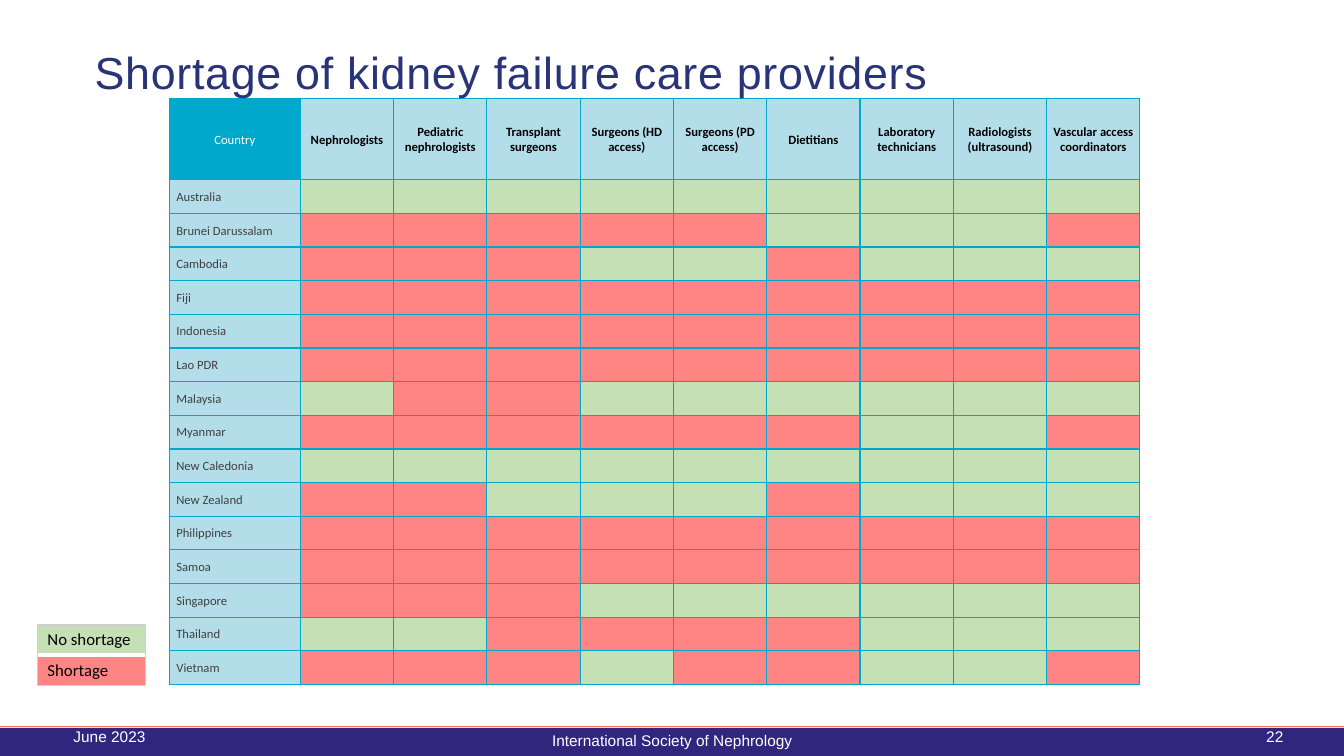
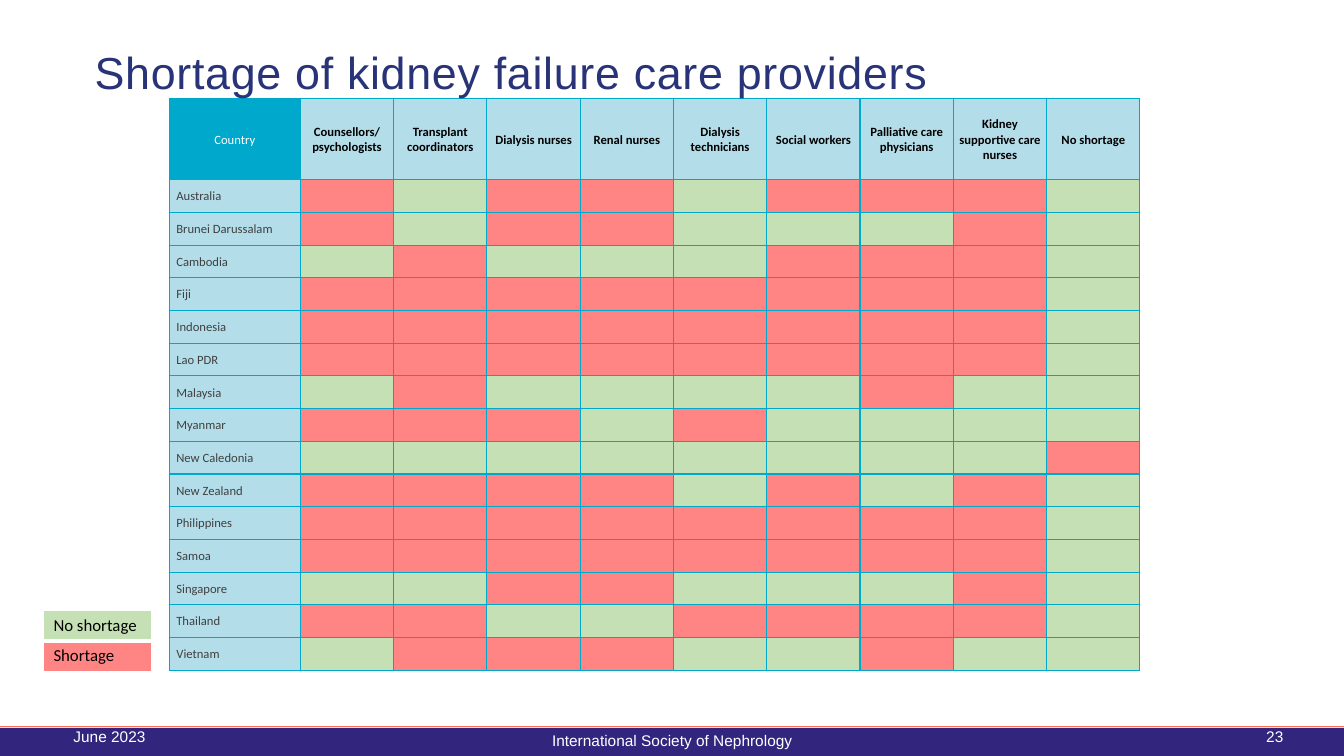
import dataclasses

import lxml.etree
import pptx
import pptx.dml.color
import pptx.enum.shapes
import pptx.enum.text
import pptx.oxml.ns
import pptx.util

ALIGN = pptx.enum.text.PP_ALIGN
MIDDLE = pptx.enum.text.MSO_ANCHOR.MIDDLE
RECT = pptx.enum.shapes.MSO_SHAPE.RECTANGLE
STRAIGHT = pptx.enum.shapes.MSO_CONNECTOR.STRAIGHT
WIDTH, HEIGHT = pptx.util.Inches(13.33), pptx.util.Inches(7.5)


@dataclasses.dataclass(frozen=True)
class Theme:
    title: str = "283378"
    band: str = "32257E"
    rule: str = "FE7055"
    grid: str = "00A8CB"
    label: str = "B4DDEA"
    good: str = "C5E0B4"
    short: str = "FF8585"
    frame: str = "D0CECE"
    body: str = "404040"
    black: str = "000000"
    white: str = "FFFFFF"
    head_font: str = "Arial"
    table_font: str = "Calibri"
    title_size: int = 32
    footer_size: int = 11
    legend_size: int = 12
    cell_size: int = 9


T = Theme()


@dataclasses.dataclass(frozen=True)
class Box:
    """A region in percent of the slide's width and height."""
    x: float
    y: float
    w: float
    h: float

    def emu(self):
        return (int(WIDTH * self.x / 100), int(HEIGHT * self.y / 100),
                int(WIDTH * self.w / 100), int(HEIGHT * self.h / 100))


TITLE = Box(6.3, 5.2, 69.45, 9.47)
BAND = Box(0, 96.27, 100, 3.73)
RULE_Y = 96.13
DATE = Box(4.73, 94.8, 22.5, 5.33)
SOCIETY = Box(33.15, 95.33, 33.75, 5.33)
NUMBER = Box(68.48, 94.8, 27.75, 5.33)
HEAD_ROW = 10.7      # height of the heading row, percent of the slide
COUNTRY_SHARE = 0.13  # country column, share of the table's width


def rgb(value):
    return pptx.dml.color.RGBColor.from_string(value)


# Text and cell helpers
def write(tf, text, size, color, font, align=ALIGN.LEFT, bold=False, spacing=None):
    p = tf.paragraphs[0]
    p.text = text
    p.alignment = align
    if spacing:
        p.line_spacing = spacing
    r = p.runs[0]
    r.font.size = pptx.util.Pt(size)
    r.font.name = font
    r.font.bold = bold
    r.font.color.rgb = rgb(color)
    return r


def add_text(s, box, text, size, color, **style):
    tf = s.shapes.add_textbox(*box.emu()).text_frame
    tf.word_wrap = True
    tf.vertical_anchor = MIDDLE
    return write(tf, text, size, color, T.head_font, **style)


def add_table(s, box, rows, cols):
    table = s.shapes.add_table(rows, cols, *box.emu()).table
    table.first_row = table.horz_banding = False
    return table


def paint(cell, fill, border, bottom=1):
    cell.fill.solid()
    cell.fill.fore_color.rgb = rgb(fill)
    tc_pr = cell._tc.get_or_add_tcPr()
    widths = {"a:lnL": 1, "a:lnR": 1, "a:lnT": 1, "a:lnB": bottom}
    for i, (tag, points) in enumerate(widths.items()):
        ln = lxml.etree.Element(pptx.oxml.ns.qn(tag), w=str(pptx.util.Pt(points)))
        solid = lxml.etree.SubElement(ln, pptx.oxml.ns.qn("a:solidFill"))
        lxml.etree.SubElement(solid, pptx.oxml.ns.qn("a:srgbClr"), val=border)
        tc_pr.insert(i, ln)


def set_margins(cell, side, top=0):
    cell.margin_left = cell.margin_right = pptx.util.Inches(side)
    cell.margin_top, cell.margin_bottom = pptx.util.Inches(top), 0
    cell.vertical_anchor = MIDDLE


# Footer band, rule and its three texts
def add_footer(s, number):
    band = s.shapes.add_shape(RECT, *BAND.emu())
    band.shadow.inherit = False
    band.fill.solid()
    band.fill.fore_color.rgb = rgb(T.band)
    band.line.fill.background()
    y = int(HEIGHT * RULE_Y / 100)
    rule = s.shapes.add_connector(STRAIGHT, 0, y, WIDTH, y)
    rule.line.color.rgb = rgb(T.rule)
    rule.line.width = pptx.util.Pt(0.75)
    lxml.etree.SubElement(rule._element.spPr, pptx.oxml.ns.qn("a:effectLst"))
    for box, text, align in ((DATE, "June 2023", ALIGN.LEFT),
                             (SOCIETY, "International Society of Nephrology", ALIGN.CENTER),
                             (NUMBER, str(number), ALIGN.RIGHT)):
        add_text(s, box, text, T.footer_size, T.white, align=align)


def add_title(s, text):
    r = add_text(s, TITLE, text, T.title_size, T.title, spacing=0.9)
    r.font._element.set("spc", "50")


# Country by provider grid: "x" marks a shortage, "." none
def add_heatmap(s, box, providers, marks):
    table = add_table(s, box, len(marks) + 1, len(providers) + 1)
    _, _, width, height = box.emu()
    first = int(width * COUNTRY_SHARE / 0.963)
    head = int(HEIGHT * HEAD_ROW / 100)
    for i, col in enumerate(table.columns):
        col.width = (width - first) // len(providers) if i else first
    for i, row in enumerate(table.rows):
        row.height = (height - head) // len(marks) if i else head

    corner = table.cell(0, 0)
    set_margins(corner, 0.07)
    paint(corner, T.grid, T.grid)
    write(corner.text_frame, "Country", T.cell_size, T.white, T.table_font,
          align=ALIGN.CENTER, spacing=1.07)
    for c, provider in enumerate(providers, 1):
        cell = table.cell(0, c)
        set_margins(cell, 0.01, 0.01)
        paint(cell, T.label, T.grid)
        write(cell.text_frame, provider, T.cell_size, T.black, T.table_font,
              align=ALIGN.CENTER, bold=True)
    for i, (country, line) in enumerate(marks.items(), 1):
        cell = table.cell(i, 0)
        set_margins(cell, 0.07)
        paint(cell, T.label, T.grid)
        write(cell.text_frame, country, T.cell_size, T.body, T.table_font, spacing=1.07)
        for c, mark in enumerate(line, 1):
            cell = table.cell(i, c)
            set_margins(cell, 0)
            paint(cell, T.short if mark == "x" else T.good, T.grid)


# Legend: two colour keys and a thin frame
def add_legend_keys(s, box):
    table = add_table(s, box, 2, 1)
    for i, (text, fill, bottom) in enumerate((("No shortage", T.good, 3),
                                              ("Shortage", T.short, 1))):
        cell = table.cell(i, 0)
        paint(cell, fill, T.white, bottom)
        write(cell.text_frame, text, T.legend_size, T.black, T.table_font)


def add_legend_frame(s, box):
    frame = s.shapes.add_shape(RECT, *box.emu())
    frame.shadow.inherit = False
    frame.fill.background()
    frame.line.color.rgb = rgb(T.frame)
    frame.line.width = pptx.util.Pt(1)


def add_shortage_slide(prs, number, providers, marks, height, legend_x, frame_on_top):
    s = prs.slides.add_slide(prs.slide_layouts[6])
    add_footer(s, number)
    grid = Box(12.6, 13.07, 72.22, height)
    add_heatmap(s, grid, providers, dict(zip(COUNTRIES, marks.split())))
    # The legend stands on the same base line as the grid
    legend = Box(legend_x, grid.y + grid.h + 0.1 - 8, 8.03, 8)
    parts = (add_legend_keys, add_legend_frame)
    for add_part in parts if frame_on_top else reversed(parts):
        add_part(s, legend)
    add_title(s, "Shortage of kidney failure care providers")


COUNTRIES = ("Australia", "Brunei Darussalam", "Cambodia", "Fiji", "Indonesia",
             "Lao PDR", "Malaysia", "Myanmar", "New Caledonia", "New Zealand",
             "Philippines", "Samoa", "Singapore", "Thailand", "Vietnam")

MEDICAL = ("Nephrologists", "Pediatric nephrologists", "Transplant surgeons",
           "Surgeons (HD access)", "Surgeons (PD access)", "Dietitians",
           "Laboratory technicians", "Radiologists (ultrasound)",
           "Vascular access coordinators")
MEDICAL_MARKS = """
    ......... xxxxx...x xxx..x... xxxxxxxxx xxxxxxxxx
    xxxxxxxxx .xx...... xxxxxx..x ......... xx...x...
    xxxxxxxxx xxxxxxxxx xxx...... ..xxxx... xxx.xx..x"""

SUPPORT = ("Counsellors/ psychologists", "Transplant coordinators", "Dialysis nurses",
           "Renal nurses", "Dialysis technicians", "Social workers",
           "Palliative care physicians", "Kidney supportive care nurses", "No shortage")
SUPPORT_MARKS = """
    x.xx.xxx. x.xx...x. .x...xxx. xxxxxxxx. xxxxxxxx.
    xxxxxxxx. .x....x.. xxx.x.... ........x xxxx.x.x.
    xxxxxxxx. xxxxxxxx. ..xx...x. xx..xxxx. .xxx..x.."""


def main():
    prs = pptx.Presentation()
    prs.slide_width, prs.slide_height = WIDTH, HEIGHT
    add_shortage_slide(prs, 22, MEDICAL, MEDICAL_MARKS, 77.5, 2.78, True)
    add_shortage_slide(prs, 23, SUPPORT, SUPPORT_MARKS, 75.6, 3.23, False)
    prs.save("out.pptx")


if __name__ == "__main__":
    main()
